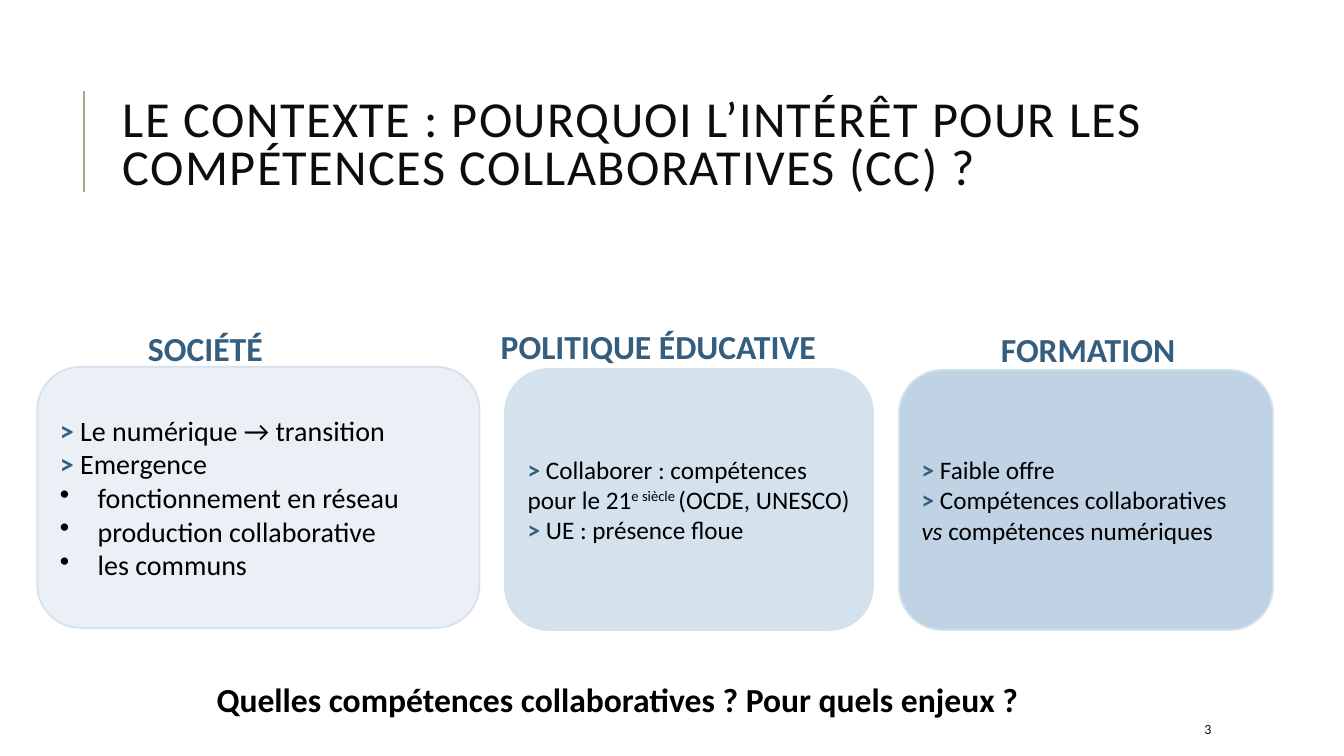
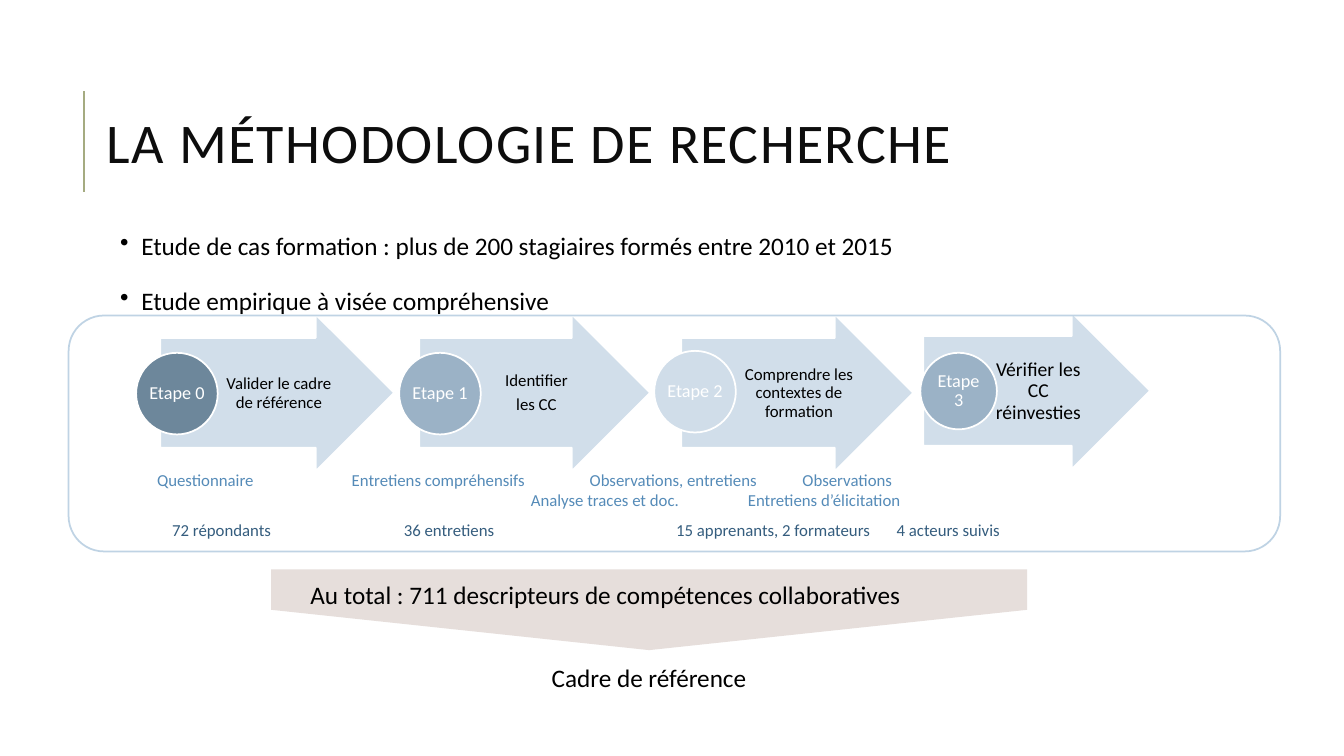
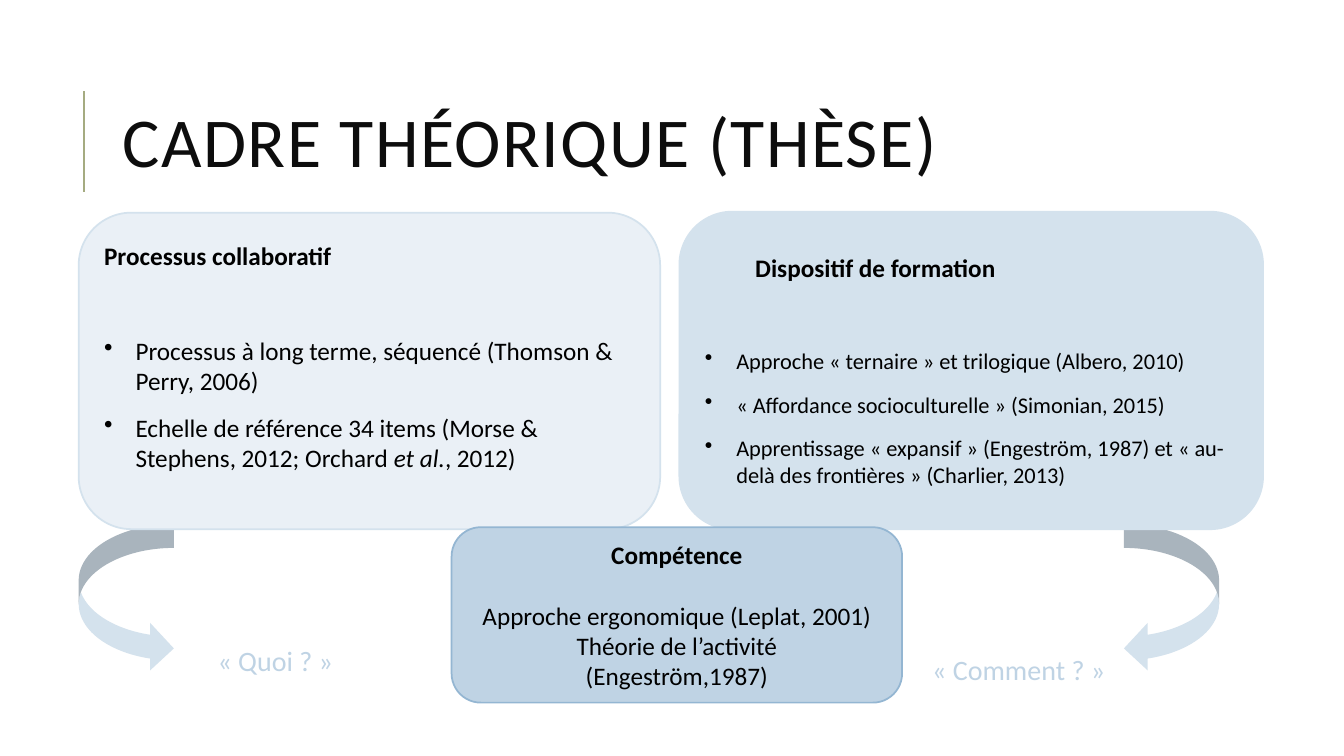
import pptx
import pptx.dml.color
import pptx.enum.shapes
import pptx.enum.text
import pptx.oxml
import pptx.oxml.ns
import pptx.util

Pt = pptx.util.Pt
SHAPE = pptx.enum.shapes.MSO_SHAPE
ALIGN = pptx.enum.text.PP_ALIGN
ANCHOR = pptx.enum.text.MSO_ANCHOR
qn = pptx.oxml.ns.qn

FONT = "Calibri"
COLORS = {
    "black": "000000", "title": "0D0D0D", "white": "FFFFFF", "rule": "A5AB81",
    "navy": "355D7E", "blue": "558BB8", "edge": "94B6D2",
    "pale": "EAF0F6", "light": "D4E2ED", "medium": "BFD3E4",
    "arrow": "CDDBE8", "slate": "6D879B", "steel": "9BB2C6", "mist": "D0DDE9",
    "sand": "E6DEDB",
}


def place(slide, kind, left, top, width, height, fill=None, line=None,
          anchor=ANCHOR.MIDDLE, margins=(7.2, 3.6, 7.2, 3.6)):
    box = Pt(left), Pt(top), Pt(width), Pt(height)
    if kind is None:
        shape = slide.shapes.add_textbox(*box)
    else:
        shape = slide.shapes.add_shape(kind, *box)
        shape.shadow.inherit = False
        for target, color in ((shape.fill, fill), (shape.line.fill, line)):
            if color:
                target.solid()
                target.fore_color.rgb = pptx.dml.color.RGBColor.from_string(COLORS[color])
            else:
                target.background()
        if line:
            shape.line.width = Pt(1.25)
    frame = shape.text_frame
    frame.word_wrap = True
    frame.vertical_anchor = anchor
    frame.margin_left, frame.margin_top, frame.margin_right, frame.margin_bottom = map(Pt, margins)
    return shape


def write(shape, text, size=18, color="black", bold=False, align=ALIGN.LEFT, before=0,
          line_spacing=None, bullet=False, indent=0, tabs=(), tracking=None):
    frame = shape.text_frame
    first = not frame.paragraphs[0].runs
    paragraph = frame.paragraphs[0] if first else frame.add_paragraph()
    properties = paragraph._p.get_or_add_pPr()
    properties.set("marL", str(Pt(indent)))
    if bullet:
        properties.set("indent", str(-Pt(indent)))
        properties.append(pptx.oxml.parse_xml(
            f'<a:buChar {pptx.oxml.ns.nsdecls("a")} char="•"/>'))
    if tabs:
        stops = "".join(f'<a:tab pos="{Pt(stop)}" algn="l"/>' for stop in tabs)
        properties.append(pptx.oxml.parse_xml(
            f'<a:tabLst {pptx.oxml.ns.nsdecls("a")}>{stops}</a:tabLst>'))
    paragraph.alignment = align
    if line_spacing:
        paragraph.line_spacing = line_spacing
    paragraph.space_before = Pt(0 if first else before)
    for part in [text] if isinstance(text, str) else text:
        words, extra = (part, {}) if isinstance(part, str) else part
        run = paragraph.add_run()
        run.text = words
        run.font.name = FONT
        run.font.size = Pt(size)
        run.font.bold = extra.get("bold", bold)
        run.font.italic = extra.get("italic", False)
        run.font.color.rgb = pptx.dml.color.RGBColor.from_string(COLORS[extra.get("color", color)])
        if tracking:
            run._r.get_or_add_rPr().set("spc", str(tracking * 100))
        if extra.get("raised"):
            run._r.get_or_add_rPr().set("baseline", "30000")


presentation = pptx.Presentation()
presentation.slide_width = Pt(960)
presentation.slide_height = Pt(540)

slides = []
for title, size, left, width in (
    ("LE CONTEXTE : POURQUOI L’INTÉRÊT POUR LES COMPÉTENCES COLLABORATIVES (CC) ?", 36, 80.6, 805),
    ("LA MÉTHODOLOGIE DE RECHERCHE", 40, 69.1, 853),
    ("CADRE THÉORIQUE (THÈSE)", 50, 80.6, 788),
):
    slide = presentation.slides.add_slide(presentation.slide_layouts[6])
    rule = slide.shapes.add_connector(
        pptx.enum.shapes.MSO_CONNECTOR.STRAIGHT, Pt(60), Pt(137), Pt(60), Pt(65))
    rule.line.width = Pt(1.5)
    rule.line.color.rgb = pptx.dml.color.RGBColor.from_string(COLORS["rule"])
    rule._element.spPr.append(pptx.oxml.parse_xml(
        f'<a:effectLst {pptx.oxml.ns.nsdecls("a")}/>'))
    heading = place(slide, None, left, 46, width, 118)
    write(heading, title, size=size, color="title", line_spacing=0.8, tracking=1)
    slides.append(slide)
context, method, theory = slides

chevron = (">", {"bold": True, "color": "navy"})
for name, name_left, name_top, name_width, box, fill, size, lines, items in (
    ("SOCIÉTÉ", 98.6, 230.4, 178, (26.6, 262, 316, 186.5), "pale", 20,
     [[chevron, " Le numérique → transition"], [chevron, " Emergence"]],
     ["fonctionnement en réseau", "production collaborative", "les communs"]),
    ("POLITIQUE ÉDUCATIVE", 350.6, 229.4, 301, (360.7, 263.5, 262.8, 186.5), "light", 18,
     [[chevron, " Collaborer : compétences pour le 21", ("e siècle ", {"raised": True}),
       "(OCDE, UNESCO)"], [chevron, " UE : présence floue"]], []),
    ("FORMATION", 707.8, 231.1, 178, (642.2, 264.2, 267.1, 185.8), "medium", 18,
     [[chevron, " Faible offre"],
      [chevron, " Compétences collaboratives ", ("vs ", {"italic": True}),
       "compétences numériques"]], []),
):
    card = place(context, SHAPE.ROUNDED_RECTANGLE, *box, fill=fill, line="light")
    for line in lines:
        write(card, line, size=size)
    for item in items:
        write(card, item, size=size, bullet=True, indent=27)
    label = place(context, None, name_left, name_top, name_width, 36, anchor=ANCHOR.TOP)
    write(label, name, size=24, color="navy", bold=True)

question = place(context, None, 147.6, 481.7, 705.6, 40, anchor=ANCHOR.TOP)
write(question, "Quelles compétences collaboratives ? Pour quels enjeux ?", size=24, bold=True)
number = place(context, None, 853.2, 509.8, 76.3, 21.6)
write(number, "3", size=10, color="title")

place(method, SHAPE.PENTAGON, 434.9, 165.6, 57.6, 540, fill="sand").rotation = 90

for step, (left, top, width, circle, fill, size, lines, gap) in enumerate((
    (114.5, 224.6, 167, (97.2, 252, 58.3), "slate", 12, ["Valider le cadre de référence"], 0),
    (299.5, 224.6, 164.9, (285.1, 252, 58.3), "steel", 12, ["Identifier", "les CC"], 4.2),
    (486.7, 224.6, 165.6, (467.3, 250.6, 58.3), "mist", 12,
     ["Comprendre les contextes de formation"], 0),
    (659.5, 223.2, 162, (657.4, 252, 54.7), "steel", 14,
     ["Vérifier les", "CC", "réinvesties"], 0),
)):
    arrow = place(method, SHAPE.RIGHT_ARROW, left, top, width, 112, fill="arrow", line="white")
    arrow.adjustments[0] = 0.7
    arrow.adjustments[1] = 0.5
    tint = arrow._element.spPr.find(qn("a:solidFill"))[0]
    tint.append(pptx.oxml.parse_xml(
        f'<a:alpha {pptx.oxml.ns.nsdecls("a")} val="90000"/>'))
    caption = place(method, None, left + width * 0.25, top + 17.2, width * 0.51, 78.5,
                    margins=(2.2, 0.7, 1.4, 0.7))
    for line in lines:
        write(caption, line, size=size, align=ALIGN.CENTER, line_spacing=0.9, before=gap)
    circle_left, circle_top, diameter = circle
    badge = place(method, SHAPE.OVAL, circle_left, circle_top, diameter, diameter,
                  fill=fill, line="white", margins=(0.7, 0.7, 0.7, 0.7))
    write(badge, f"Etape {step}", size=13, color="white", align=ALIGN.CENTER, line_spacing=0.9)

study = place(method, None, 77.8, 163.4, 860, 66, anchor=ANCHOR.TOP,
              margins=(3.6, 3.6, 3.6, 3.6))
for item in ("Etude de cas formation : plus de 200 stagiaires formés entre 2010 et 2015",
             "Etude empirique à visée compréhensive"):
    write(study, item, bullet=True, indent=19.5, before=20, line_spacing=0.9)
study.text_frame.paragraphs[0]._p.pPr.set("indent", str(-Pt(15.2)))
study.text_frame.paragraphs[1]._p.pPr.set("indent", str(-Pt(15.2)))

process = place(method, SHAPE.ROUNDED_RECTANGLE, 49, 225.4, 865.4, 168.5, line="medium")
process.adjustments[0] = 0.15

samples = place(method, None, 115.9, 367.9, 800, 36, anchor=ANCHOR.TOP)
write(samples, "72 répondants\t36 entretiens\t15 apprenants, 2 formateurs\t4 acteurs suivis",
      size=12, color="navy", tabs=(165.5, 360, 517.5))
tools = place(method, None, 105.1, 331.9, 810, 36, anchor=ANCHOR.TOP)
for line, tabs in (
    ("Questionnaire\tEntretiens compréhensifs\tObservations, entretiens\tObservations",
     (139, 309, 461)),
    ("\tAnalyse traces et doc.\tEntretiens d’élicitation", (267, 422)),
):
    write(tools, line, size=12, color="blue", tabs=tabs)

total = place(method, None, 214.6, 410.4, 563, 28.8, anchor=ANCHOR.TOP)
write(total, "Au total : 711 descripteurs de compétences collaboratives")
result = place(method, None, 375.8, 469.4, 175.7, 40, anchor=ANCHOR.TOP)
write(result, "Cadre de référence", align=ALIGN.CENTER)

for left, mirrored in ((56.2, True), (802.8, False)):
    curve = place(theory, SHAPE.CURVED_LEFT_ARROW, left, 374.4, 68, 105.8, fill="light")
    if mirrored:
        curve._element.spPr.xfrm.set("flipH", "1")

for box, fill, bottom, name, indent, size, items in (
    ((485.3, 151.2, 416.9, 226.8), "light", 3.6, "Dispositif de formation", 36, 16,
     ["Approche « ternaire » et trilogique (Albero, 2010)",
      "« Affordance socioculturelle » (Simonian, 2015)",
      "Apprentissage « expansif » (Engeström, 1987) et « au-delà des frontières » (Charlier, 2013)"]),
    ((56.2, 151.9, 415.4, 226.1), "pale", 24, "Processus collaboratif", 0, 18,
     ["Processus à long terme, séquencé (Thomson & Perry, 2006)",
      ["Echelle de référence 34 items (Morse & Stephens, 2012; Orchard ",
       ("et al.", {"italic": True}), ", 2012)"]]),
):
    panel = place(theory, SHAPE.ROUNDED_RECTANGLE, *box, fill=fill, line="light",
                  margins=(7.2, 3.6, 7.2, bottom))
    write(panel, name, bold=True, indent=indent)
    for position, item in enumerate(items):
        write(panel, item, size=size, bullet=True, indent=22.5, before=12 if position else 46)

for text, left, top, width in (("« Quoi ? »", 148.3, 455.8, 141),
                               ("« Comment ? »", 658.8, 462.2, 189)):
    prompt = place(theory, None, left, top, width, 31.7, anchor=ANCHOR.TOP)
    write(prompt, text, size=20, color="medium")

skill = place(theory, SHAPE.ROUNDED_RECTANGLE, 322.6, 376.6, 321.8, 125.3,
              fill="medium", line="edge")
write(skill, "Compétence", bold=True, align=ALIGN.CENTER)
for line, gap in (("Approche ergonomique (Leplat, 2001)", 22),
                  ("Théorie de l’activité", 0), ("(Engeström,1987)", 0)):
    write(skill, line, align=ALIGN.CENTER, before=gap)

presentation.save("out.pptx")
